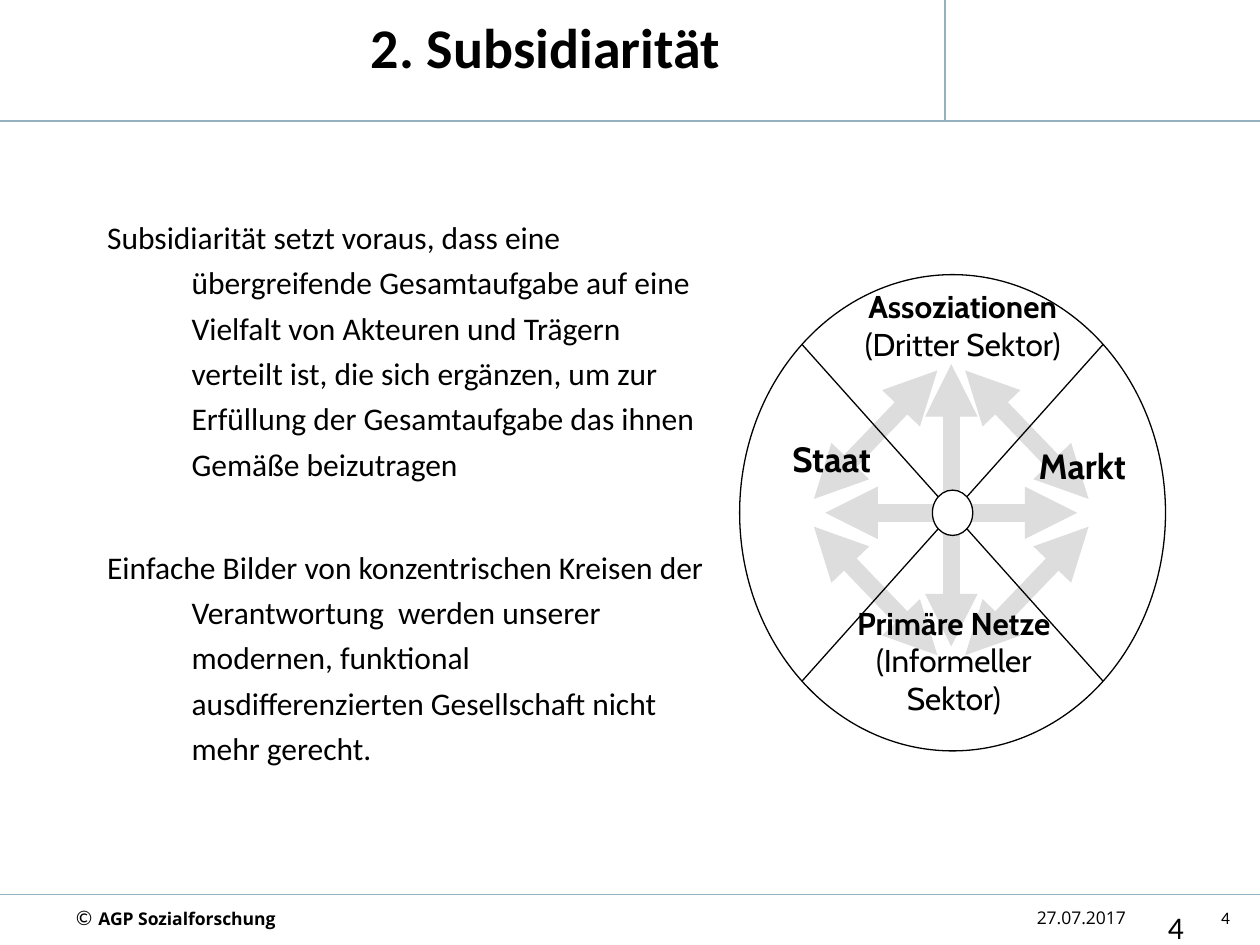
"""Build the slide on subsidiarity with its wheel of four sectors."""
from itertools import product

from lxml import etree
from pptx import Presentation
from pptx.dml.color import RGBColor
from pptx.enum.shapes import MSO_CONNECTOR, MSO_SHAPE
from pptx.enum.text import MSO_ANCHOR, MSO_AUTO_SIZE, PP_ALIGN
from pptx.oxml.ns import qn
from pptx.util import Inches, Pt

STRAIGHT = MSO_CONNECTOR.STRAIGHT
WHEEL, HUB, RECT = MSO_SHAPE.FLOWCHART_SUMMING_JUNCTION, MSO_SHAPE.OVAL, MSO_SHAPE.RECTANGLE
LEFT, MID, RIGHT = PP_ALIGN.LEFT, PP_ALIGN.CENTER, PP_ALIGN.RIGHT
TOP, FIXED = MSO_ANCHOR.TOP, MSO_AUTO_SIZE.NONE
COLS, ROWS = 100, 75
WIDE, HIGH = Inches(10), Inches(7.5)
HEX = {"ink": "000000", "rule": "95B1C0", "spoke": "DDDDDD", "paper": "FFFFFF"}
SANS, HEAD, WEB = "Calibri", "Cabin", "Open Sans"
AXIS = (75.5, 40.7)
BODY = (
    "Subsidiarität setzt voraus, dass eine übergreifende Gesamtaufgabe auf eine "
    "Vielfalt von Akteuren und Trägern verteilt ist, die sich ergänzen, um zur "
    "Erfüllung der Gesamtaufgabe das ihnen Gemäße beizutragen",
    "Einfache Bilder von konzentrischen Kreisen der Verantwortung  werden unserer "
    "modernen, funktional ausdifferenzierten Gesellschaft nicht mehr gerecht.",
)
SECTORS = (
    ((59.9, 34.7, 12.2, 14.8), 20, "Staat", None),
    ((79.5, 35.3, 12.8, 11.2), 20, "Markt", None),
    ((67.8, 22.8, 17.2, 12.8), 18, "Assoziationen", "(Dritter Sektor)"),
    ((67.8, 47.9, 15.8, 11.4), 18, "Primäre Netze", "(Informeller Sektor)"),
)


def grid(*cells):
    """Turn alternating columns and rows into lengths."""
    steps = (WIDE / COLS, HIGH / ROWS)
    return [round(cell * steps[i % 2]) for i, cell in enumerate(cells)]


def tint(name):
    """Look up a colour by its role."""
    return RGBColor.from_string(HEX[name])


def write(frame, *paras, font=SANS, size=18, bold=False, align=LEFT, inset=None, wrap=True):
    """Fill a frame; a paragraph is a list of (text, changes) runs."""
    frame.word_wrap, frame.auto_size, frame.vertical_anchor = wrap, FIXED, TOP
    if inset is not None:
        frame.margin_left = frame.margin_top = frame.margin_right = frame.margin_bottom = inset
    for i, runs in enumerate(paras):
        para = frame.add_paragraph() if i else frame.paragraphs[0]
        para.alignment = align
        for text, change in runs:
            look = {"font": font, "size": size, "bold": bold, **change}
            run = para.add_run()
            run.text = text
            run.font.name, run.font.size = look["font"], Pt(look["size"])
            run.font.bold = look["bold"]
            run.font.color.rgb = tint("ink")


def label(shapes, at, *paras, **look):
    """Add a text box."""
    write(shapes.add_textbox(*grid(*at)).text_frame, *paras, **look)


def line(shapes, ends, color, width, heads=False):
    """Add a straight line, with arrowheads at both ends if asked."""
    item = shapes.add_connector(STRAIGHT, *grid(*ends))
    item.line.color.rgb, item.line.width = tint(color), Pt(width)
    if heads:
        for tag in ("a:headEnd", "a:tailEnd"):
            etree.SubElement(item.line._get_or_add_ln(), qn(tag), type="triangle")
    etree.SubElement(item._element.spPr, qn("a:effectLst"))


def shape(shapes, kind, at, edge, fill=None):
    """Add a preset shape with a thin edge."""
    item = shapes.add_shape(kind, *grid(*at))
    item.shadow.inherit = False
    item.line.color.rgb, item.line.width = tint(edge), Pt(0.75)
    if fill:
        item.fill.solid()
        item.fill.fore_color.rgb = tint(fill)
    else:
        item.fill.background()
    return item


def place(item, at):
    """Move a placeholder to its cells."""
    item.left, item.top, item.width, item.height = grid(*at)


def title(slide):
    """Fill the title."""
    item = slide.shapes.title
    place(item, (5, 0.5, 78.6, 14.2))
    write(item.text_frame, [("2. Subsidiarität", {})], size=32, bold=True, align=MID)
    item.text_frame.margin_right = Inches(0.3)


def body(slide):
    """Fill the body with hanging paragraphs."""
    item = slide.placeholders[1]
    place(item, (7.5, 16.2, 49.6, 52.8))
    write(item.text_frame, *[[(text, {})] for text in BODY])
    for i, para in enumerate(item.text_frame.paragraphs):
        props = para._p.get_or_add_pPr()
        props.set("marL", str(Inches(0.67)))
        props.set("indent", str(-Inches(0.67)))
        etree.SubElement(props, qn("a:buNone"))
        para.line_spacing, para.space_before = 1.2, Pt(33 * i)


def frame(shapes):
    """Draw the rules and the footer."""
    for ends in ((0, 71, COLS, 71), (75, 0, 75, 9.6), (0, 9.6, COLS, 9.6)):
        line(shapes, ends, "rule", 1)
    label(shapes, (5, 71, 63, 3.4), [
        ("©", {"size": 12}), (" ", {"size": 14}),
        ("AGP Sozialforschung", {"font": WEB, "bold": True})], size=10)
    page = shape(shapes, RECT, (93.8, 71.5, 4.8, 2.7), "paper")
    write(page.text_frame, [("4", {})], size=10, align=RIGHT, wrap=False)
    label(shapes, (81.3, 71.5, 10.1, 2.7), [("27.07.2017", {})], font=WEB, size=10)
    label(shapes, (91.7, 71.6, 8.3, 3.3), [("4", {})])


def wheel(shapes):
    """Draw the spokes, the wheel, its sectors and the hub."""
    x, y = AXIS
    spokes = [(x + 1.1 * h, y + 11.3 * v, x + 10.9 * h, y + 1.1 * v)
              for h, v in product((1, -1), repeat=2)]
    spokes += [(x - 10, y, x + 10, y), (x, y - 11.8, x, y + 10.6)]
    for ends in spokes:
        line(shapes, ends, "spoke", 10, heads=True)
    shape(shapes, WHEEL, (58.7, 21.8, 33.8, 37.8), "ink")
    for at, size, name, note in SECTORS:
        paras = [[(name, {"bold": True})]] + ([[(note, {})]] if note else [])
        label(shapes, at, *paras, font=HEAD, size=size, align=MID, inset=0)
    shape(shapes, HUB, (74, 38.9, 3.2, 3.6), "ink", fill="paper")


def main():
    """Build and save the slide."""
    deck = Presentation()
    deck.slide_width, deck.slide_height = WIDE, HIGH
    slide = deck.slides.add_slide(deck.slide_layouts[1])
    title(slide)
    body(slide)
    frame(slide.shapes)
    wheel(slide.shapes.add_group_shape().shapes)
    deck.save("out.pptx")


if __name__ == "__main__":
    main()
